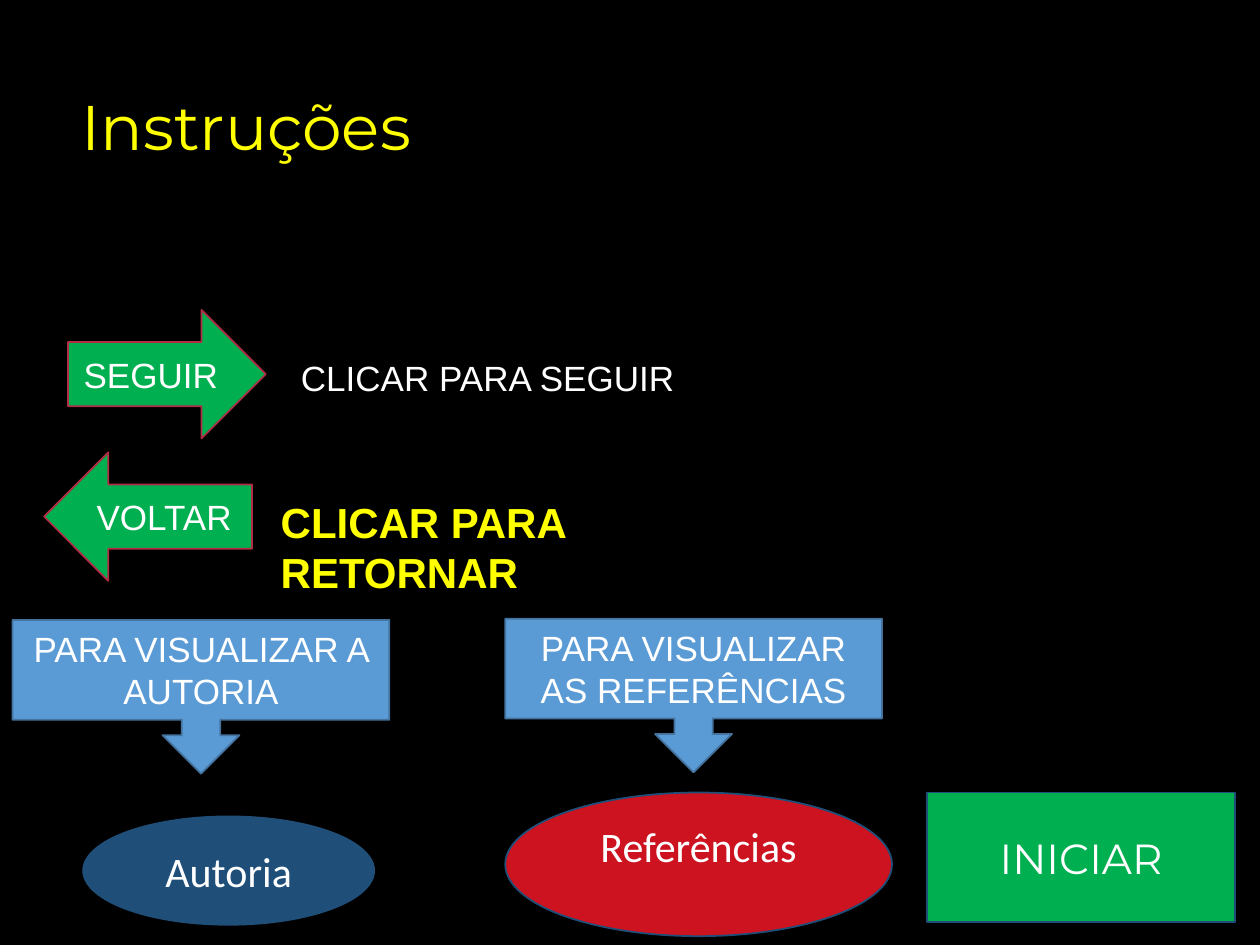
from pptx import Presentation
from pptx.dml.color import RGBColor
from pptx.enum.shapes import MSO_SHAPE as Form
from pptx.enum.text import MSO_ANCHOR as Anchor, MSO_AUTO_SIZE as Fit, PP_ALIGN as Align
from pptx.util import Inches, Pt

BLACK = RGBColor(0x00, 0x00, 0x00)
WHITE = RGBColor(0xFF, 0xFF, 0xFF)
YELLOW = RGBColor(0xFF, 0xFF, 0x00)
GREEN = RGBColor(0x00, 0xB0, 0x50)
RED = RGBColor(0xCD, 0x13, 0x20)
WINE = RGBColor(0xB2, 0x2C, 0x46)
NAVY = RGBColor(0x1F, 0x4E, 0x79)
BLUE = RGBColor(0x5B, 0x9B, 0xD5)
STEEL = RGBColor(0x43, 0x73, 0x9E)

COLS, ROWS = 100, 75  # grid over the whole slide


class Page:
    """Holds the style and the current slide."""

    def __init__(self, deck):
        self.col = deck.slide_width / COLS
        self.row = deck.slide_height / ROWS
        self.slide = deck.slides.add_slide(deck.slide_layouts[5])
        back = self.slide.background.fill
        back.solid()
        back.fore_color.rgb = BLACK

    def place(self, left, top, wide, high):
        return (round(left * self.col), round(top * self.row),
                round(wide * self.col), round(high * self.row))

    def letter(self, item, text, size, face, color=WHITE, bold=False,
               align=Align.LEFT, **frame):
        box = item.text_frame
        for key, value in {"word_wrap": True, **frame}.items():
            setattr(box, key, value)
        box.text = text
        par = box.paragraphs[0]
        par.alignment = align
        for key, value in {"size": Pt(size), "name": face, "bold": bold}.items():
            setattr(par.font, key, value)
        par.font.color.rgb = color
        return par

    def title(self, text, spot):
        item = self.slide.shapes.title
        for key, value in zip(("left", "top", "width", "height"), self.place(*spot)):
            setattr(item, key, value)
        par = self.letter(item, text, 36, "Montserrat", YELLOW,
                          vertical_anchor=Anchor.MIDDLE, auto_size=Fit.NONE)
        par.line_spacing = 0.9

    def label(self, text, spot, size, **style):
        item = self.slide.shapes.add_textbox(*self.place(*spot))
        self.letter(item, text, size, "Arial", auto_size=Fit.SHAPE_TO_FIT_TEXT, **style)

    def button(self, form, text, spot, fill, line, size=24, face="Calibri", **frame):
        item = self.slide.shapes.add_shape(form, *self.place(*spot))
        item.shadow.inherit = False
        item.fill.solid()
        item.fill.fore_color.rgb = fill
        item.line.color.rgb = line
        item.line.width = Pt(1)
        self.letter(item, text, size, face, align=Align.CENTER,
                    vertical_anchor=Anchor.MIDDLE, **frame)


def main():
    deck = Presentation()
    deck.slide_width, deck.slide_height = Inches(10), Inches(7.5)
    page = Page(deck)
    page.title("Instruções", (5.5, 5, 82.3, 10.6))

    # Bottom right: references and start
    page.button(Form.OVAL, "Referências", (40.1, 62.9, 30.7, 11.4), RED, NAVY,
                margin_bottom=Inches(0.35))
    page.button(Form.RECTANGLE, "INICIAR", (73.6, 62.9, 24.4, 10.3), GREEN, NAVY,
                face="Montserrat")

    # Navigation arrows
    for form, text, spot in (
        (Form.RIGHT_ARROW, "SEGUIR", (5.4, 24.6, 15.7, 10.2)),
        (Form.LEFT_ARROW, "VOLTAR", (3.5, 35.9, 16.5, 10.2)),
    ):
        page.button(form, text, spot, GREEN, WINE, 20, "Arial")

    # What each arrow does
    page.label("CLICAR PARA RETORNAR", (21.3, 38.9, 37.7, 9.1), 24,
               color=YELLOW, bold=True)
    page.label("CLICAR PARA SEGUIR", (22.9, 27.8, 34.5, 4.4), 20)

    # Callouts pointing at the ovals
    for text, left, top in (
        ("PARA VISUALIZAR A AUTORIA", 1, 49.2),
        ("PARA VISUALIZAR AS REFERÊNCIAS", 40.1, 49.1),
    ):
        page.button(Form.DOWN_ARROW_CALLOUT, text, (left, top, 29.9, 12.2),
                    BLUE, STEEL, 20, "Arial")

    # Bottom left: authorship
    page.button(Form.OVAL, "Autoria", (6.6, 64.8, 23.1, 8.6), NAVY, NAVY)

    deck.save("out.pptx")


if __name__ == "__main__":
    main()
